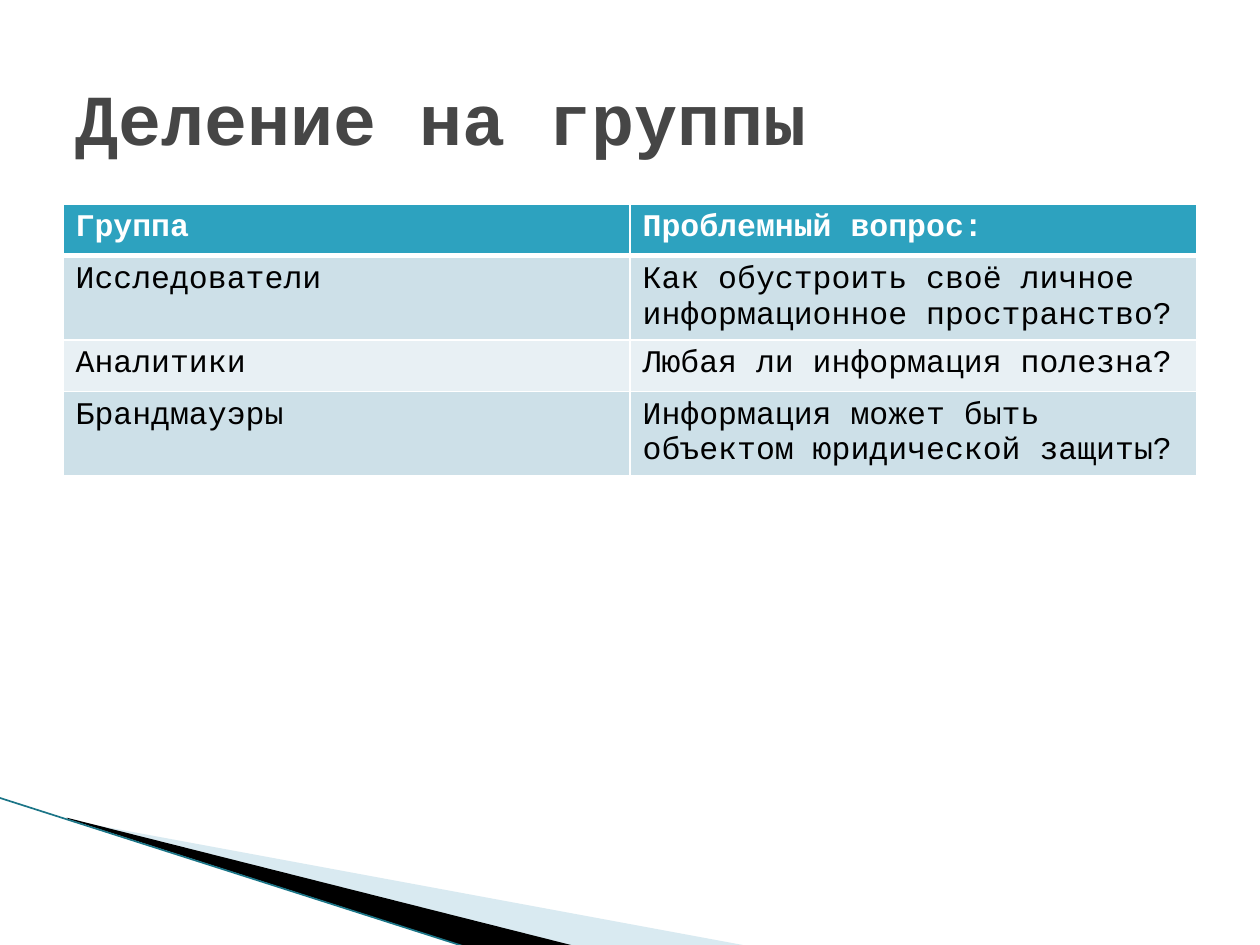
from pptx import Presentation
from pptx.dml.color import RGBColor
from pptx.enum.shapes import MSO_CONNECTOR
from pptx.enum.text import MSO_ANCHOR
from pptx.oxml.ns import qn
from pptx.util import Inches, Pt
from lxml.etree import SubElement

WHITE = RGBColor(0xFF, 0xFF, 0xFF)
BLACK = RGBColor(0x00, 0x00, 0x00)
TITLE_GRAY = RGBColor(0x46, 0x46, 0x46)
HEADER_TEAL = RGBColor(0x2D, 0xA2, 0xBF)
BAND_DARK = RGBColor(0xCD, 0xE0, 0xE8)
BAND_LIGHT = RGBColor(0xE8, 0xF0, 0xF4)
WEDGE_BLUE = RGBColor(0xA0, 0xCB, 0xDC)
EDGE_TEAL = RGBColor(0x1B, 0x75, 0x87)
FONT = "Courier New"

GROUPS = [
    ("Группа", "Проблемный вопрос:"),
    ("Исследователи", "Как обустроить своё личное информационное пространство?"),
    ("Аналитики", "Любая ли информация полезна?"),
    ("Брандмауэры", "Информация может быть объектом юридической защиты?"),
]


def style_text(paragraph, size, color, bold):
    for run in paragraph.runs:
        run.font.name = FONT
        run.font.size = Pt(size)
        run.font.bold = bold
        run.font.color.rgb = color


def add_wedge(slide, points, color, opacity=100):
    corners = [(Inches(x), Inches(y)) for x, y in points]
    builder = slide.shapes.build_freeform(*corners[0])
    builder.add_line_segments(corners[1:], close=True)
    wedge = builder.convert_to_shape()
    wedge.shadow.inherit = False
    wedge.line.fill.background()
    wedge.fill.solid()
    wedge.fill.fore_color.rgb = color
    if opacity < 100:
        color_element = wedge.fill._xPr.find(qn("a:solidFill"))[0]
        SubElement(color_element, qn("a:alpha"), val=str(opacity * 1000))


def add_corner_decoration(slide, left, top):
    """Two wedges and an edge line fanning out from (left, top)."""
    def place(*offsets):
        return [(left + x, top + y) for x, y in offsets]

    add_wedge(slide, place((0.02, 0.02), (5.42, 1.02), (4.03, 1.02), (0.02, 0.01)),
              WEDGE_BLUE, 40)
    add_wedge(slide, place((0, 0), (4.04, 1.02), (3.19, 1.03), (0.01, 0.01)), BLACK)
    start, end = place((-0.54, -0.16), (3.18, 1.03))
    edge = slide.shapes.add_connector(
        MSO_CONNECTOR.STRAIGHT, *(Inches(value) for value in start + end))
    edge.line.color.rgb = EDGE_TEAL
    edge.line.width = Pt(0.95)
    SubElement(edge._element.spPr, qn("a:effectLst"))


def add_title(slide, left, top, width, height):
    title = slide.shapes.add_textbox(left, top, width, height)
    text_frame = title.text_frame
    text_frame.word_wrap = True
    text_frame.vertical_anchor = MSO_ANCHOR.MIDDLE
    text_frame.text = "Деление на группы"
    style_text(text_frame.paragraphs[0], 41, TITLE_GRAY, True)


def set_borders(cell, bottom_width):
    properties = cell._tc.get_or_add_tcPr()
    widths = {"a:lnL": 1, "a:lnR": 1, "a:lnT": 1, "a:lnB": bottom_width}
    for position, (tag, width) in enumerate(widths.items()):
        border = SubElement(properties, qn(tag), w=str(Pt(width)))
        fill = SubElement(border, qn("a:solidFill"))
        SubElement(fill, qn("a:srgbClr"), val=str(WHITE))
        properties.insert(position, border)  # borders come before the fill


def add_group_table(slide, left, top, width, height):
    frame = slide.shapes.add_table(len(GROUPS), len(GROUPS[0]), left, top, width, height)
    table = frame.table
    for row in table.rows:
        row.height = Inches(0.41)  # rows grow with wrapped text
    frame.height = height
    for row_index, texts in enumerate(GROUPS):
        header = row_index == 0
        band = HEADER_TEAL if header else BAND_DARK if row_index % 2 else BAND_LIGHT
        for column_index, text in enumerate(texts):
            cell = table.cell(row_index, column_index)
            cell.text_frame.text = text
            style_text(cell.text_frame.paragraphs[0], 18, WHITE if header else BLACK, header)
            cell.fill.solid()
            cell.fill.fore_color.rgb = band
            set_borders(cell, 3 if header else 1)


def main():
    presentation = Presentation()
    presentation.slide_width = Inches(10)
    presentation.slide_height = Inches(7.5)
    slide = presentation.slides.add_slide(presentation.slide_layouts[6])

    # Corner decoration, behind the content
    add_corner_decoration(slide, 0.53, 6.49)
    # Table and title share the same margins
    margin, content_width = Inches(0.5), Inches(9)
    add_group_table(slide, margin, Inches(1.62), content_width, Inches(2.21))
    add_title(slide, margin, Inches(0.3), content_width, Inches(1.25))

    presentation.save("out.pptx")


if __name__ == "__main__":
    main()
